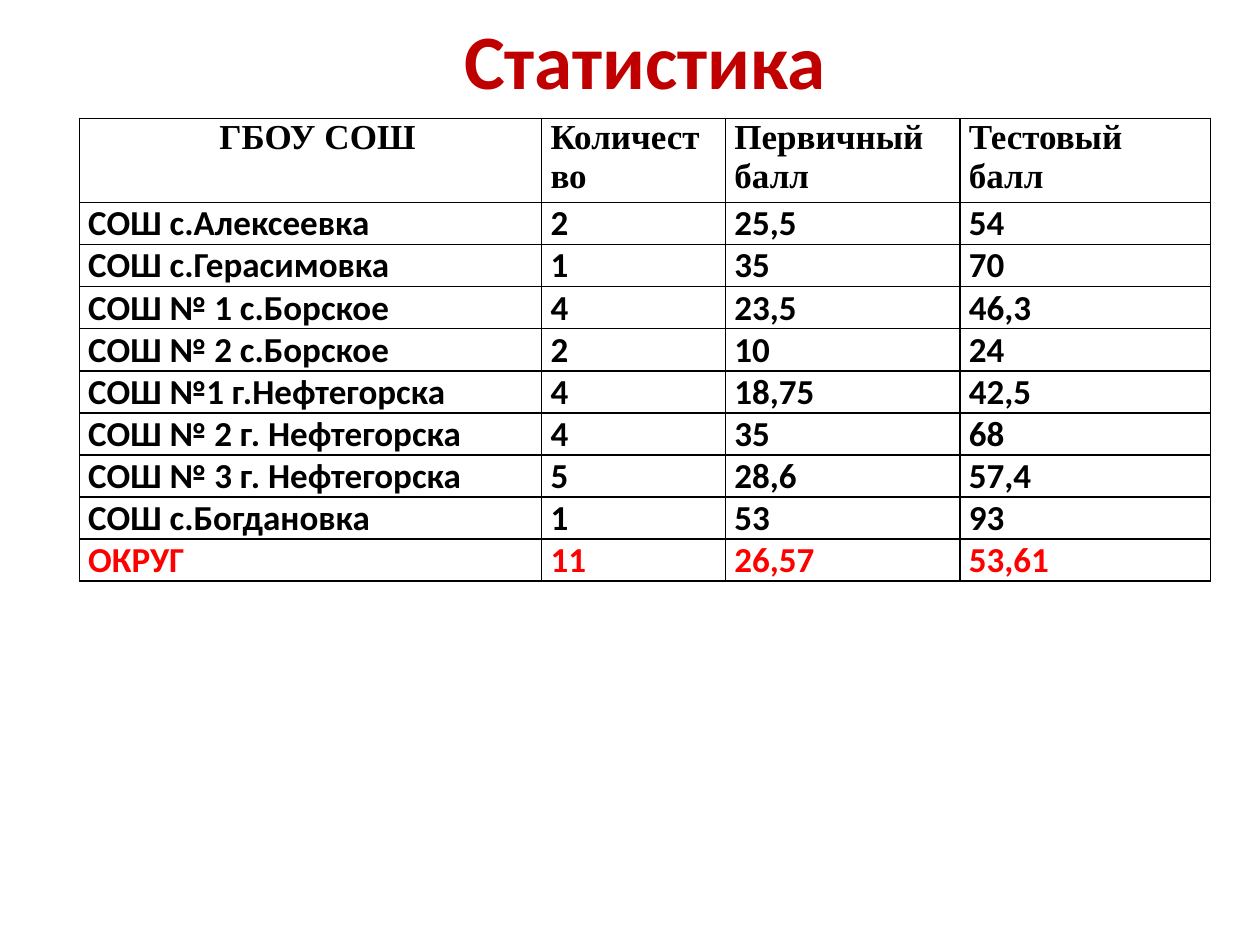
from typing import NamedTuple

from lxml import etree
from pptx import Presentation
from pptx.dml.color import RGBColor
from pptx.enum import text
from pptx.oxml import ns
from pptx.util import Inches, Pt

BLACK, WHITE, TITLE_RED, TOTAL_RED = "000000", "FFFFFF", "C00000", "FF0000"
TABLE_LEFT, TABLE_TOP, TABLE_HEIGHT = 0.63, 0.94, 3.67
COLUMN_WIDTHS = (3.67, 1.46, 1.86, 1.99)
MIN_ROW_HEIGHT = 0.3  # rows grow to fit their text
CELL_MARGIN, FIRST_HEADING_MARGIN = 0.07, 0.18
ALIGN = text.PP_ALIGN


class Style(NamedTuple):
    font: str
    size: float
    color: str


class School(NamedTuple):
    name: str
    count: str
    primary_score: str
    test_score: str


TITLE_STYLE = Style("Calibri", 44, TITLE_RED)
HEADER_STYLE = Style("Times New Roman", 20, BLACK)
BODY_STYLE = Style("Calibri", 20, BLACK)
TOTAL_STYLE = Style("Calibri", 20, TOTAL_RED)

HEADER = School("ГБОУ СОШ", "Количество", "Первичный балл", "Тестовый балл")
SCHOOLS = (
    School("СОШ с.Алексеевка", "2", "25,5", "54"),
    School("СОШ с.Герасимовка", "1", "35", "70"),
    School("СОШ № 1 с.Борское", "4", "23,5", "46,3"),
    School("СОШ № 2 с.Борское", "2", "10", "24"),
    School("СОШ №1 г.Нефтегорска", "4", "18,75", "42,5"),
    School("СОШ № 2 г. Нефтегорска", "4", "35", "68"),
    School("СОШ № 3 г. Нефтегорска", "5", "28,6", "57,4"),
    School("СОШ с.Богдановка", "1", "53", "93"),
)
TOTAL = School("ОКРУГ", "11", "26,57", "53,61")


def rgb(color: str) -> RGBColor:
    return RGBColor.from_string(color)


def write(tf, content: str, style: Style, align) -> None:
    p = tf.paragraphs[0]
    p.alignment = align
    r = p.add_run()
    r.text = content
    r.font.name = style.font
    r.font.size = Pt(style.size)
    r.font.bold = True
    r.font.color.rgb = rgb(style.color)


def add_borders(cell, color: str, width: float) -> None:
    """Outline all four sides; call before setting the cell's fill."""
    tc_pr = cell._tc.get_or_add_tcPr()
    for side in ("a:lnL", "a:lnR", "a:lnT", "a:lnB"):
        line = etree.SubElement(tc_pr, ns.qn(side), w=str(Pt(width)))
        fill = etree.SubElement(line, ns.qn("a:solidFill"))
        etree.SubElement(fill, ns.qn("a:srgbClr"), val=color)


def fill_row(table, index: int, values: School, style: Style) -> None:
    for column, value in enumerate(values):
        cell = table.cell(index, column)
        centred = index == 0 and column == 0
        cell.margin_left = Inches(FIRST_HEADING_MARGIN if centred else CELL_MARGIN)
        cell.margin_right = Inches(CELL_MARGIN)
        cell.margin_top = cell.margin_bottom = Inches(0)
        add_borders(cell, BLACK, 1)
        cell.fill.solid()
        cell.fill.fore_color.rgb = rgb(WHITE)
        write(cell.text_frame, value, style, ALIGN.CENTER if centred else ALIGN.JUSTIFY)


def add_title(s) -> None:
    tf = s.shapes.add_textbox(Inches(0.62), Inches(0), Inches(9), Inches(0.94)).text_frame
    tf.word_wrap = True
    tf.vertical_anchor = text.MSO_ANCHOR.MIDDLE
    write(tf, "Статистика", TITLE_STYLE, ALIGN.CENTER)


def add_statistics(s) -> None:
    rows = [(HEADER, HEADER_STYLE)]
    rows += [(school, BODY_STYLE) for school in SCHOOLS]
    rows.append((TOTAL, TOTAL_STYLE))
    frame = s.shapes.add_table(
        len(rows), len(COLUMN_WIDTHS), Inches(TABLE_LEFT), Inches(TABLE_TOP),
        Inches(sum(COLUMN_WIDTHS)), Inches(TABLE_HEIGHT),
    )
    table = frame.table
    table.horz_banding = False
    for column, width in zip(table.columns, COLUMN_WIDTHS):
        column.width = Inches(width)
    for index, (values, style) in enumerate(rows):
        table.rows[index].height = Inches(MIN_ROW_HEIGHT)
        fill_row(table, index, values, style)
    frame.height = Inches(TABLE_HEIGHT)


def main() -> None:
    prs = Presentation()
    prs.slide_width, prs.slide_height = Inches(10), Inches(7.5)
    s = prs.slides.add_slide(prs.slide_layouts[6])
    add_title(s)
    add_statistics(s)
    prs.save("out.pptx")


if __name__ == "__main__":
    main()
